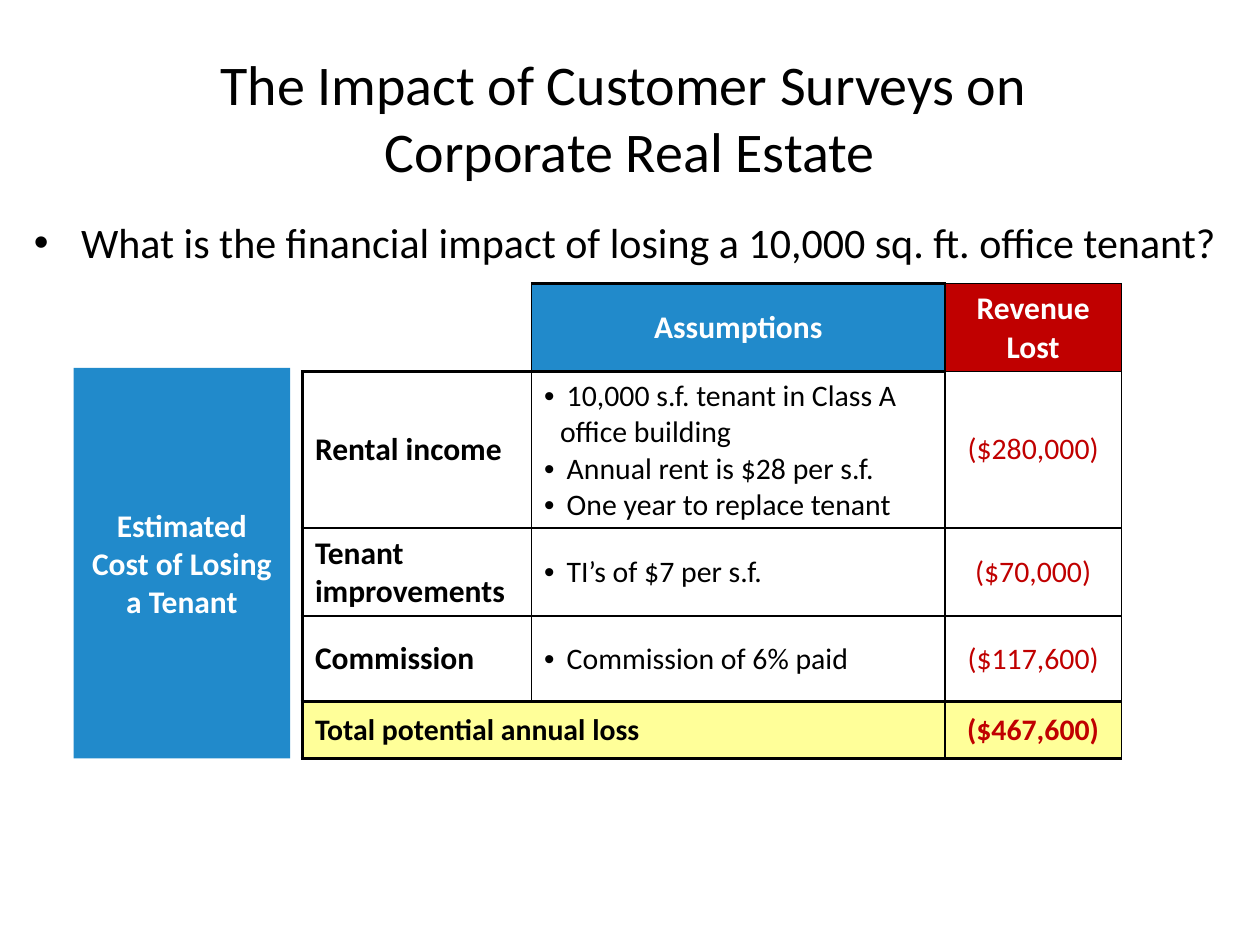
from lxml import etree
from pptx import Presentation
from pptx.dml.color import RGBColor
from pptx.enum.shapes import MSO_SHAPE
from pptx.enum.text import MSO_ANCHOR, PP_ALIGN
from pptx.oxml.ns import qn
from pptx.util import Pt

RECT = MSO_SHAPE.RECTANGLE
MIDDLE, TOP = MSO_ANCHOR.MIDDLE, MSO_ANCHOR.TOP
LEFT, CENTER = PP_ALIGN.LEFT, PP_ALIGN.CENTER
COLORS = {"black": "000000", "white": "FFFFFF", "blue": "218ACB",
          "red": "C00000", "yellow": "FFFF99"}


def write(frame, text, size=18, color="black", bold=False, align=LEFT,
          anchor=MIDDLE, indent=0):
    frame.word_wrap = True
    frame.vertical_anchor = anchor
    frame.text = text
    for para in frame.paragraphs:
        para.alignment = align
        if indent:
            props = para._p.get_or_add_pPr()
            props.set("marL", str(Pt(indent)))
            props.set("indent", str(-Pt(indent)))
            font = etree.SubElement(props, qn("a:buFont"))
            font.set("typeface", "Arial")
            etree.SubElement(props, qn("a:buChar")).set("char", "•")
        for run in para.runs:
            run.font.name = "Calibri"
            run.font.size = Pt(size)
            run.font.bold = bold
            run.font.color.rgb = RGBColor.from_string(COLORS[color])


def border(cell, side, color, width):
    line = etree.SubElement(cell._tc.get_or_add_tcPr(), qn("a:ln" + side))
    line.set("w", str(Pt(width)))
    fill = etree.SubElement(line, qn("a:solidFill"))
    etree.SubElement(fill, qn("a:srgbClr")).set("val", COLORS[color])


deck = Presentation()
deck.slide_width, deck.slide_height = Pt(720), Pt(540)
slide = deck.slides.add_slide(deck.slide_layouts[6])
shapes = slide.shapes

query = shapes.add_textbox(Pt(12.24), Pt(120.24), Pt(707.76), Pt(58.3))
write(query.text_frame,
      "What is the financial impact of losing a 10,000 sq. ft. office tenant?",
      size=24, anchor=TOP, indent=27)

rows = [
    ("", "Assumptions", "Revenue\nLost"),
    ("Rental income",
     " 10,000 s.f. tenant in Class A office building\n"
     " Annual rent is $28 per s.f.\n One year to replace tenant",
     "($280,000)"),
    ("Tenant improvements", " TI’s of $7 per s.f.", "($70,000)"),
    ("Commission", " Commission of 6% paid", "($117,600)"),
    ("Total potential annual loss", "", "($467,600)"),
]
widths = [131, 236.2, 100.8]
heights = [50.4, 89.2, 50.4, 49, 32.4]
last = len(rows) - 1

holder = shapes.add_table(len(rows), len(widths), Pt(172.8), Pt(162),
                          Pt(sum(widths)), Pt(sum(heights)))
table = holder.table
table.first_row = table.horz_banding = False
for col, width in zip(table.columns, widths):
    col.width = Pt(width)
for row, height in zip(table.rows, heights):
    row.height = Pt(height)
table.cell(last, 0).merge(table.cell(last, 1))

for r, texts in enumerate(rows):
    for c, text in enumerate(texts):
        cell = table.cell(r, c)
        blank = r == c == 0
        thick = {
            "L": c == 0 and r > 0,
            "R": False,
            "T": r == last or (c < 2 and r == 1) or (r == 0 and c == 1),
            "B": r >= last - 1 or (r == 0 and c < 2),
        }
        for side, heavy in thick.items():
            edge = "white" if blank and side in "LT" else "black"
            border(cell, side, edge, 2.25 if heavy else 1)
        if r == 0:
            back = ("white", "blue", "red")[c]
        else:
            back = "yellow" if r == last else "white"
        cell.fill.solid()
        cell.fill.fore_color.rgb = RGBColor.from_string(COLORS[back])
        cell.vertical_anchor = MIDDLE
        if not text:
            continue
        head, total = r == 0, r == last
        color = "white" if head else "red" if c == 2 else "black"
        write(cell.text_frame, text, color=color,
              size=18 if head or (c == 0 and not total) else 17,
              bold=head or total or c == 0,
              align=CENTER if head or c == 2 else LEFT,
              indent=9 if c == 1 and not head else 0)

label = shapes.add_shape(RECT, Pt(42), Pt(210.24), Pt(123.84), Pt(223.2))
label.shadow.inherit = False
label.fill.solid()
label.fill.fore_color.rgb = RGBColor.from_string(COLORS["blue"])
label.line.fill.background()
write(label.text_frame, "Estimated Cost of Losing a Tenant",
      color="white", bold=True, align=CENTER)

title = shapes.add_textbox(Pt(36), Pt(21.6), Pt(648), Pt(90))
write(title.text_frame,
      "The Impact of Customer Surveys on \vCorporate Real Estate",
      size=32, align=CENTER)

deck.save("out.pptx")
